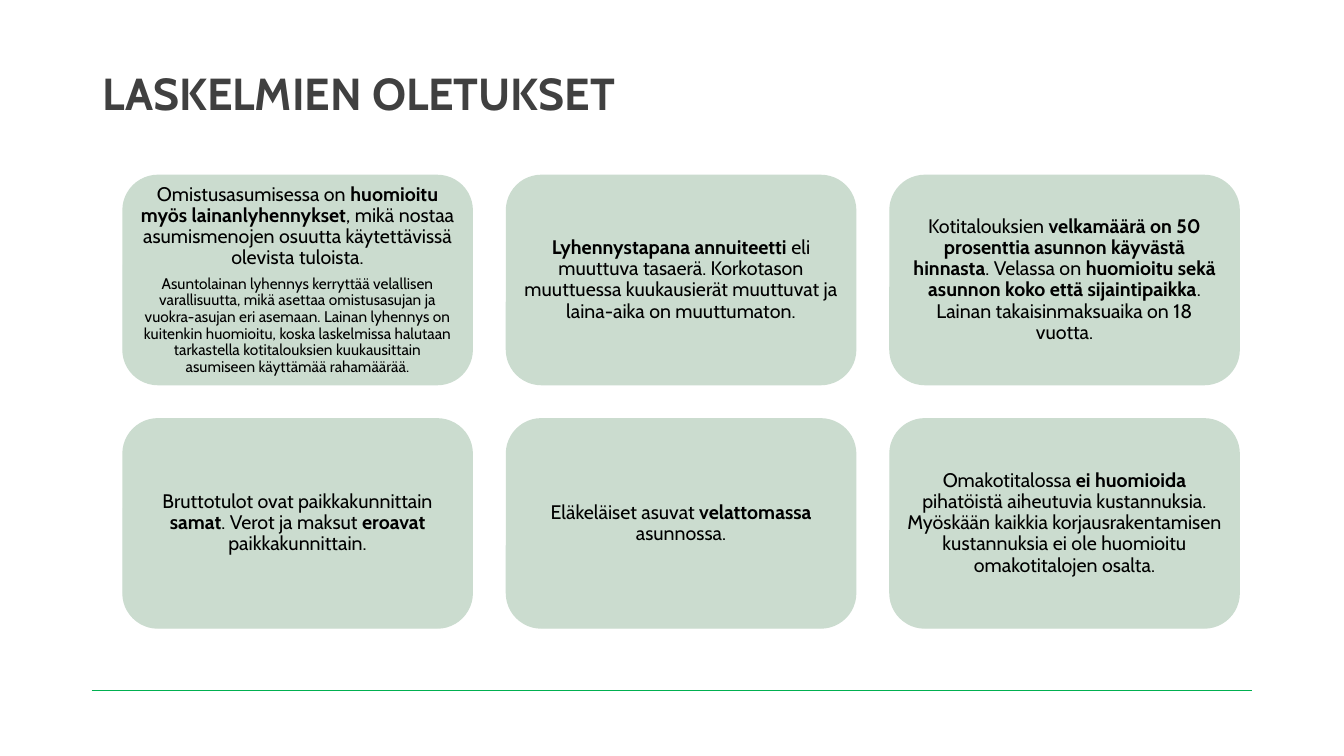
from pptx import Presentation
from pptx.dml.color import RGBColor
from pptx.enum.shapes import MSO_CONNECTOR, MSO_SHAPE
from pptx.enum.text import MSO_ANCHOR, MSO_AUTO_SIZE, PP_ALIGN
from pptx.oxml.ns import qn
from pptx.util import Pt
from lxml.etree import SubElement

PX = 9144  # 100 px to the inch
FONT = "Cabin"
GREEN, SAGE, GREY, BLACK = "00B050", "CBDCCF", "404040", "000000"

# Each card lists (size, text) paragraphs; * switches bold on and off
CARDS = [
    [(14, "Omistusasumisessa on *huomioitu myös lainanlyhennykset*, mikä nostaa "
          "asumismenojen osuutta käytettävissä olevista tuloista."),
     (11, "Asuntolainan lyhennys kerryttää velallisen varallisuutta, mikä asettaa "
          "omistusasujan ja vuokra-asujan eri asemaan. Lainan lyhennys on kuitenkin "
          "huomioitu, koska laskelmissa halutaan tarkastella kotitalouksien "
          "kuukausittain asumiseen käyttämää rahamäärää.")],
    [(14, "*Lyhennystapana annuiteetti* eli muuttuva tasaerä. Korkotason muuttuessa "
          "kuukausierät muuttuvat ja laina-aika on muuttumaton.")],
    [(14, "Kotitalouksien *velkamäärä on 50 prosenttia asunnon käyvästä hinnasta*. "
          "Velassa on *huomioitu sekä asunnon koko että sijaintipaikka*. "
          "Lainan takaisinmaksuaika on 18 vuotta.")],
    [(14, "Bruttotulot ovat paikkakunnittain *samat*. Verot ja maksut *eroavat* "
          "paikkakunnittain.")],
    [(14, "Eläkeläiset asuvat *velattomassa *asunnossa.")],
    [(14, "Omakotitalossa *ei huomioida *pihatöistä aiheutuvia kustannuksia. "
          "Myöskään kaikkia korjausrakentamisen kustannuksia ei ole huomioitu "
          "omakotitalojen osalta.")],
]


def px(n):
    return int(n * PX)


def tint(color, code):
    color.rgb = RGBColor.from_string(code)


def write(para, text, size, code, bold=False):
    para.line_spacing = 0.9
    for i, part in enumerate(text.split("*")):
        if part:
            run = para.add_run()
            run.text = part
            font = run.font
            font.name, font.size = FONT, Pt(size)
            font.bold = bold or i % 2 == 1
            tint(font.color, code)


def add_title(slide, text, x, y, w, h):
    title = slide.shapes.title
    title.left, title.top, title.width, title.height = map(px, (x, y, w, h))
    frame = title.text_frame
    frame.auto_size = MSO_AUTO_SIZE.NONE
    frame.vertical_anchor = MSO_ANCHOR.MIDDLE
    para = frame.paragraphs[0]
    para.alignment = PP_ALIGN.LEFT
    write(para, text, 32, GREY, True)


def add_card(slide, paras, x, y, w, h):
    card = slide.shapes.add_shape(MSO_SHAPE.ROUNDED_RECTANGLE, *map(px, (x, y, w, h)))
    card.shadow.inherit = False
    card.fill.solid()
    tint(card.fill.fore_color, SAGE)
    tint(card.line.color, SAGE)
    card.line.width = Pt(1)
    frame = card.text_frame
    frame.word_wrap = True
    frame.vertical_anchor = MSO_ANCHOR.MIDDLE
    frame.margin_left = frame.margin_right = px(6)
    frame.margin_top = frame.margin_bottom = px(6)
    for i, (size, text) in enumerate(paras):
        para = frame.add_paragraph() if i else frame.paragraphs[0]
        para.alignment = PP_ALIGN.CENTER
        if i:
            para.space_before = Pt(5)
        write(para, text, size, BLACK)


def add_grid(slide, cards, x, y, w, h, cols=3, gap=34):
    rows = len(cards) // cols
    wide = (w - gap * (cols - 1)) / cols
    high = (h - gap * (rows - 1)) / rows
    for i, paras in enumerate(cards):
        row, col = divmod(i, cols)
        add_card(slide, paras, x + col * (wide + gap), y + row * (high + gap), wide, high)


def add_rule(slide, x, y, w):
    rule = slide.shapes.add_connector(
        MSO_CONNECTOR.STRAIGHT, px(x), px(y), px(x + w), px(y))
    tint(rule.line.color, GREEN)
    rule.line.width = Pt(1)
    SubElement(rule._element.spPr, qn("a:effectLst"))


def main():
    deck = Presentation()
    deck.slide_width, deck.slide_height = px(1333), px(750)
    slide = deck.slides.add_slide(deck.slide_layouts[5])
    add_rule(slide, 91, 685, 1151)
    add_title(slide, "LASKELMIEN OLETUKSET", 92, 40, 1150, 110)
    add_grid(slide, CARDS, 122, 174, 1107, 449)
    deck.save("out.pptx")


if __name__ == "__main__":
    main()
